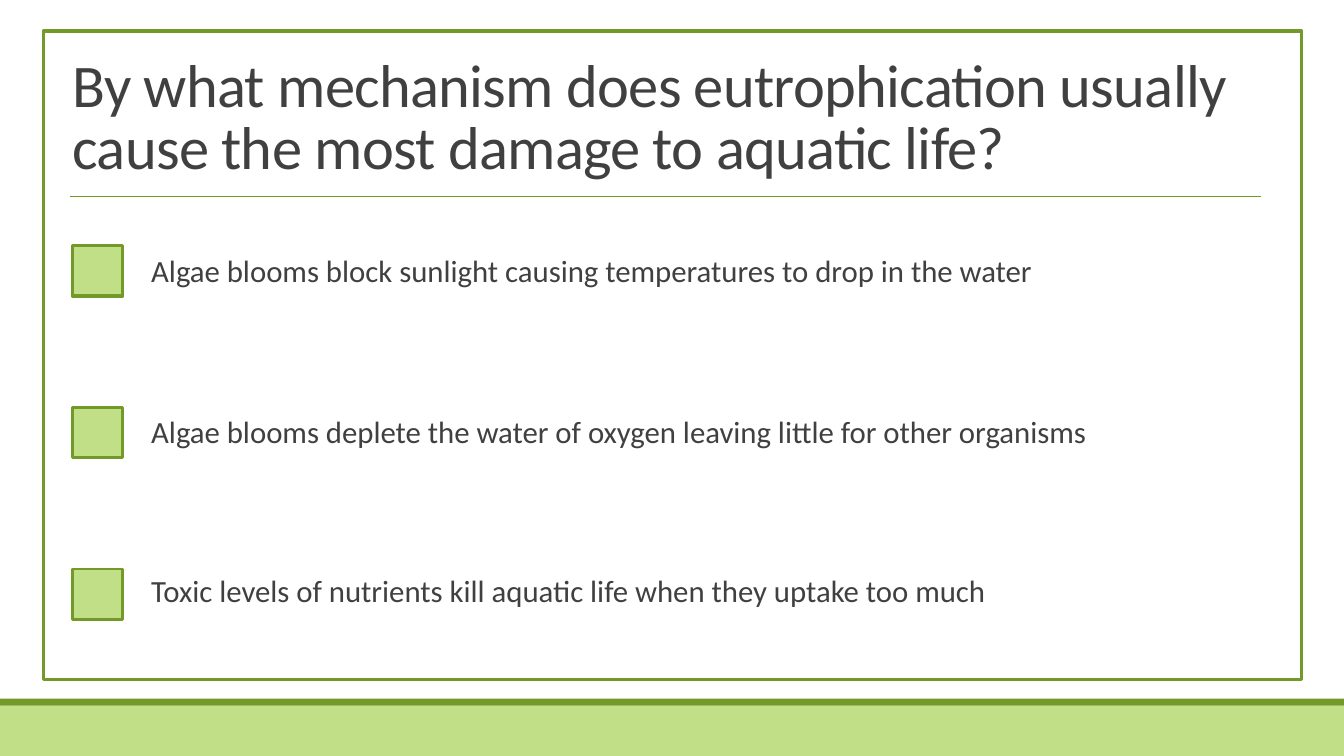
"""Build a quiz slide about how eutrophication harms aquatic life."""
from pptx import Presentation
from pptx.dml.color import RGBColor
from pptx.enum.shapes import MSO_CONNECTOR as Connector, MSO_SHAPE as Shape
from pptx.enum.text import MSO_ANCHOR as Anchor, MSO_AUTO_SIZE as AutoSize, PP_ALIGN as Align
from pptx.oxml.ns import qn
from pptx.util import Pt

COLORS = {"green": "739A28", "light": "C1DF87", "text": "404040"}
QUESTION = "By what mechanism does eutrophication usually cause the most damage to aquatic life?"
ANSWERS = [
    ("Algae blooms block sunlight causing temperatures to drop in the water", 2.25, 3.6),
    ("Algae blooms deplete the water of oxygen leaving little for other organisms", 2, 3.6),
    ("Toxic levels of nutrients kill aquatic life when they uptake too much", 2, 1),
]
FIRST_TOP, ROW_PITCH, CHECK_SIZE = 175.5, 115.5, 36


def color(name):
    return RGBColor.from_string(COLORS[name])


def add_rect(page, left, top, width, height, fill=None, line=None, weight=1):
    box = page.shapes.add_shape(Shape.RECTANGLE, Pt(left), Pt(top), Pt(width), Pt(height))
    box.shadow.inherit = False
    if fill:
        box.fill.solid()
        box.fill.fore_color.rgb = color(fill)
    else:
        box.fill.background()
    if line:
        box.line.color.rgb = color(line)
        box.line.width = Pt(weight)
    else:
        box.line.fill.background()


def write(box, text, size, spacing, anchor=Anchor.TOP, inset=0, tracking=None):
    frame = box.text_frame
    frame.word_wrap = True
    frame.auto_size = AutoSize.NONE
    frame.vertical_anchor = anchor
    frame.margin_left = frame.margin_right = Pt(inset)
    frame.margin_top = frame.margin_bottom = Pt(3.6)
    para = frame.paragraphs[0]
    para.alignment = Align.LEFT
    para.line_spacing = spacing
    span = para.add_run()
    span.text = text
    span.font.name = "Calibri"
    span.font.size = Pt(size)
    span.font.color.rgb = color("text")
    if tracking is not None:
        span.font._element.set("spc", str(round(tracking * 100)))


def add_title(page):
    title = page.shapes.title
    title.left, title.top, title.width, title.height = Pt(44.6), Pt(28.8), Pt(892.8), Pt(104.4)
    write(title, QUESTION, 43.2, 0.85, anchor=Anchor.BOTTOM, inset=7.2, tracking=-0.5)


def add_rule(page, left, right, top):
    rule = page.shapes.add_connector(Connector.STRAIGHT, Pt(left), Pt(top), Pt(right), Pt(top))
    rule.line.color.rgb = color("green")
    rule.line.width = Pt(1)
    properties = rule._element.spPr
    properties.append(properties.makeelement(qn("a:effectLst"), {}))


def add_answer(page, top, text, weight, offset):
    add_rect(page, 51.8, top, CHECK_SIZE, CHECK_SIZE, fill="light", line="green", weight=weight)
    box = page.shapes.add_textbox(Pt(108), Pt(top + offset), Pt(779), Pt(40))
    write(box, text, 22, 0.9)


def main():
    deck = Presentation()
    deck.slide_width, deck.slide_height = Pt(960), Pt(540)
    page = deck.slides.add_slide(deck.slide_layouts.get_by_name("Title Only"))
    add_rect(page, 0, 504, 960, 36, fill="light")
    add_rect(page, 0, 499, 960, 5, fill="green")
    add_rect(page, 31, 22.3, 898.6, 463, line="green", weight=2.5)
    add_title(page)
    add_rule(page, 49.7, 900.7, 140.4)
    for row, answer in enumerate(ANSWERS):
        add_answer(page, FIRST_TOP + row * ROW_PITCH, *answer)
    deck.save("out.pptx")


if __name__ == "__main__":
    main()
